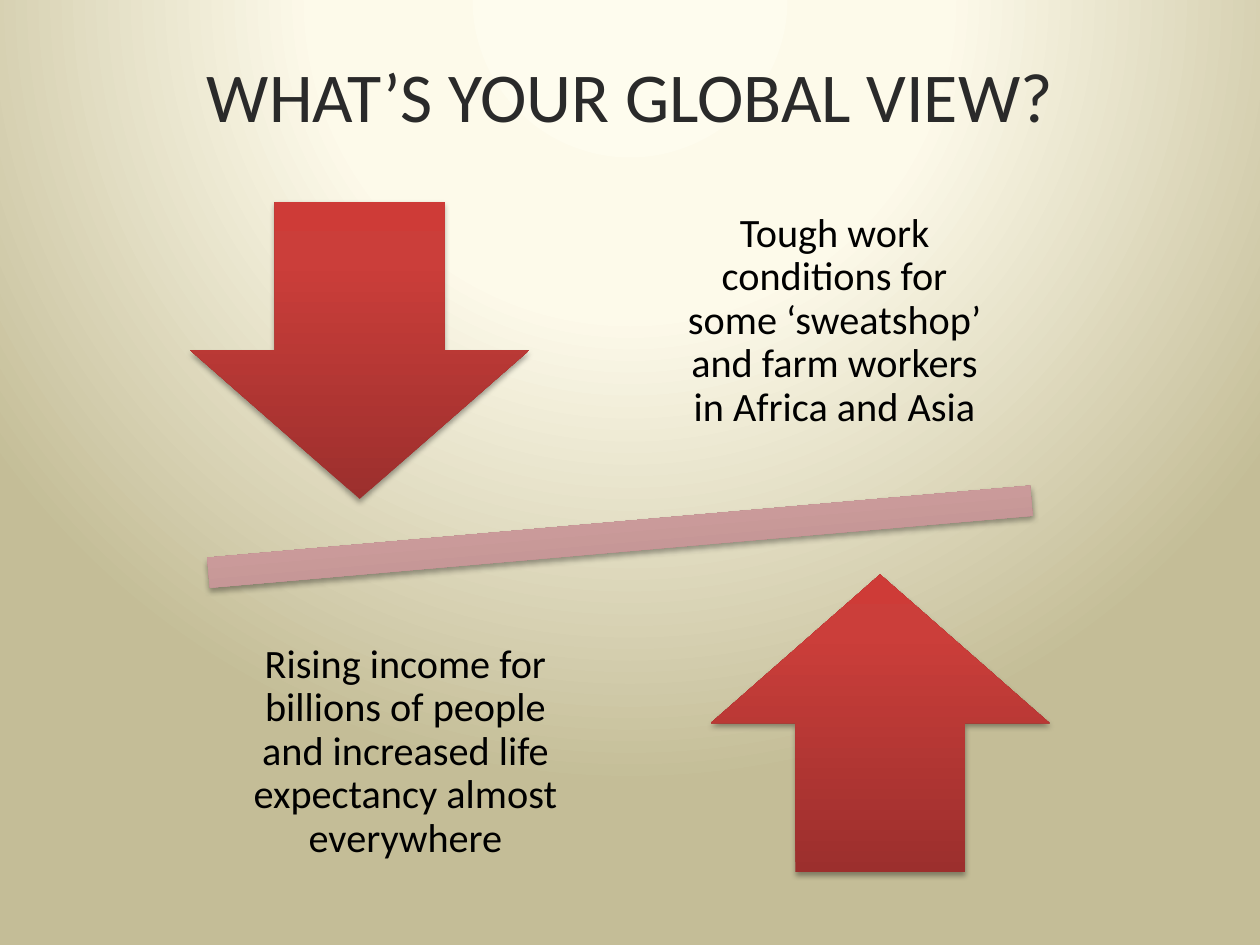
"""Builds the global view slide: two opposed arrows on a tilted balance."""
from dataclasses import dataclass

from lxml.etree import SubElement
from pptx import Presentation
from pptx.dml.color import RGBColor
from pptx.enum.shapes import MSO_SHAPE
from pptx.enum.text import MSO_ANCHOR, PP_ALIGN
from pptx.oxml.ns import qn
from pptx.util import Inches, Pt

CELL = Inches(0.1)
COLS, ROWS = 100, 75
RED = ((0, "9C2F2D"), (80, "CB3E3A"), (100, "CE3B37"))
PINK = ((0, "A98180"), (80, "DBA7A7"), (100, "DDA7A6"))
SAND = ((0, "FEFCEE"), (40, "FDFAEA"), (100, "C4BD97"))
FRAME = {"word_wrap": True, "vertical_anchor": MSO_ANCHOR.MIDDLE}
FRAME |= {f"margin_{side}": Inches(0.18) for side in ("left", "top", "right", "bottom")}
HEAD = {"word_wrap": True, "vertical_anchor": MSO_ANCHOR.BOTTOM,
        "margin_bottom": Inches(0.66)}
PARA = {"alignment": PP_ALIGN.CENTER, "line_spacing": 0.9, "space_before": Pt(0)}


@dataclass
class Box:
    col: float
    row: float
    wide: float
    high: float

    def place(self) -> tuple:
        return tuple(round(n * CELL) for n in (self.col, self.row, self.wide, self.high))


@dataclass
class Form:
    box: Box
    kind: MSO_SHAPE
    stops: tuple
    turn: float = 0


@dataclass
class Note:
    box: Box
    text: str


FORMS = (
    Form(Box(4.6, 37.5, 89.2, 10.2), MSO_SHAPE.MATH_MINUS, PINK, 355),
    Form(Box(15.1, 16, 26.9, 23.6), MSO_SHAPE.DOWN_ARROW, RED),
    Form(Box(56.4, 45.6, 26.9, 23.6), MSO_SHAPE.UP_ARROW, RED),
)
NOTES = (
    Note(Box(51.9, 13.1, 28.7, 24.8),
         "Tough work conditions for some ‘sweatshop’ and farm workers in Africa and Asia"),
    Note(Box(17.5, 47.3, 29.4, 24.8),
         "Rising income for billions of people and increased life expectancy almost everywhere"),
)


def apply(target, values: dict) -> None:
    """Set each named attribute on the target."""
    for name, value in values.items():
        setattr(target, name, value)


def tint(parent, code: str, alpha: int = 100) -> None:
    """Add a hex colour to an XML parent."""
    node = SubElement(parent, qn("a:srgbClr"), val=code)
    if alpha < 100:
        SubElement(node, qn("a:alpha"), val=str(alpha * 1000))


def blend(owner, fill, stops: tuple):
    """Give a fill its gradient stops and return the gradient element."""
    fill.gradient()
    grad = next(owner.iter(qn("a:gradFill")))
    for child in list(grad):
        grad.remove(child)
    items = SubElement(grad, qn("a:gsLst"))
    for share, code in stops:
        tint(SubElement(items, qn("a:gs"), pos=str(share * 1000)), code)
    return grad


def write(frame, text: str, size: float, code: str, look: dict, after: float = 0) -> None:
    """Fill a text frame with one centred paragraph."""
    apply(frame, look)
    para = frame.paragraphs[0]
    apply(para, PARA | {"space_after": Pt(after)})
    run = para.add_run()
    run.text = text
    apply(run.font, {"name": "Calibri", "size": Pt(size)})
    run.font.color.rgb = RGBColor.from_string(code)


def draw(slide, form: Form) -> None:
    """Draw a shaded shape with a soft shadow."""
    shape = slide.shapes.add_shape(form.kind, *form.box.place())
    shape.rotation = form.turn
    grad = blend(shape._element, shape.fill, form.stops)
    SubElement(grad, qn("a:lin"), ang=str(270 * 60000), scaled="0")
    shape.line.fill.background()
    shape.shadow.inherit = False
    effects = next(shape._element.iter(qn("a:effectLst")))
    shade = SubElement(effects, qn("a:outerShdw"), blurRad=str(Pt(3.1)),
                       dist=str(Pt(1.8)), dir=str(90 * 60000), rotWithShape="0")
    tint(shade, "000000", 35)


def label(slide, note: Note) -> None:
    """Add a text box beside an arrow."""
    box = slide.shapes.add_textbox(*note.box.place())
    write(box.text_frame, note.text, 23, "000000", FRAME, 8)


def main() -> None:
    """Build and save the slide."""
    deck = Presentation()
    apply(deck, {"slide_width": COLS * CELL, "slide_height": ROWS * CELL})
    slide = deck.slides.add_slide(deck.slide_layouts[5])
    grad = blend(slide._element, slide.background.fill, SAND)
    path = SubElement(grad, qn("a:path"), path="circle")
    SubElement(path, qn("a:fillToRect"), l="50000", t="-80000", r="50000", b="180000")
    title = slide.shapes.title
    apply(title, dict(zip(("left", "top", "width", "height"), Box(10, 3, 80, 14.5).place())))
    write(title.text_frame, "WHAT’S YOUR GLOBAL VIEW?", 40, "2A2A2A", HEAD)
    for form in FORMS:
        draw(slide, form)
    for note in NOTES:
        label(slide, note)
    deck.save("out.pptx")


if __name__ == "__main__":
    main()
